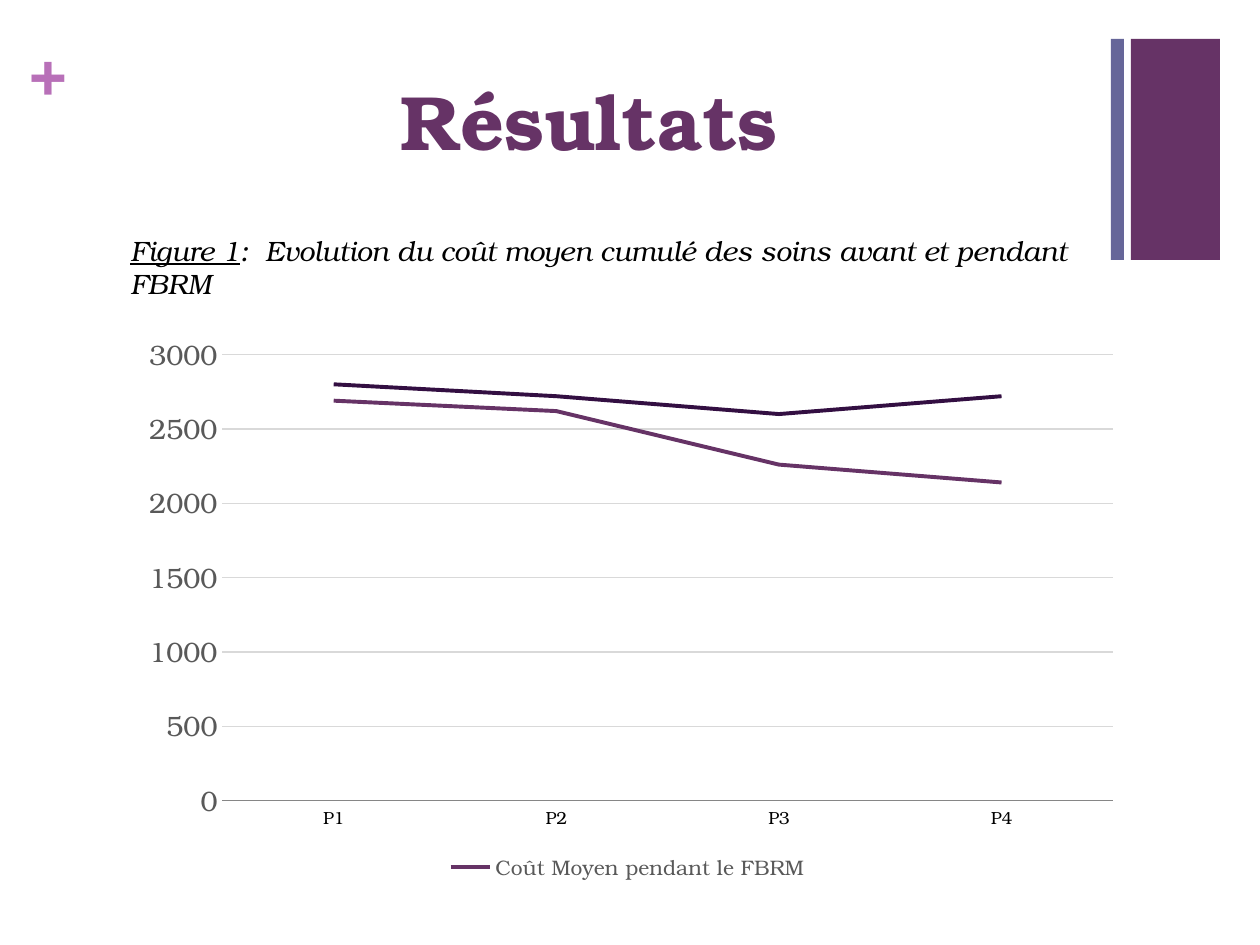
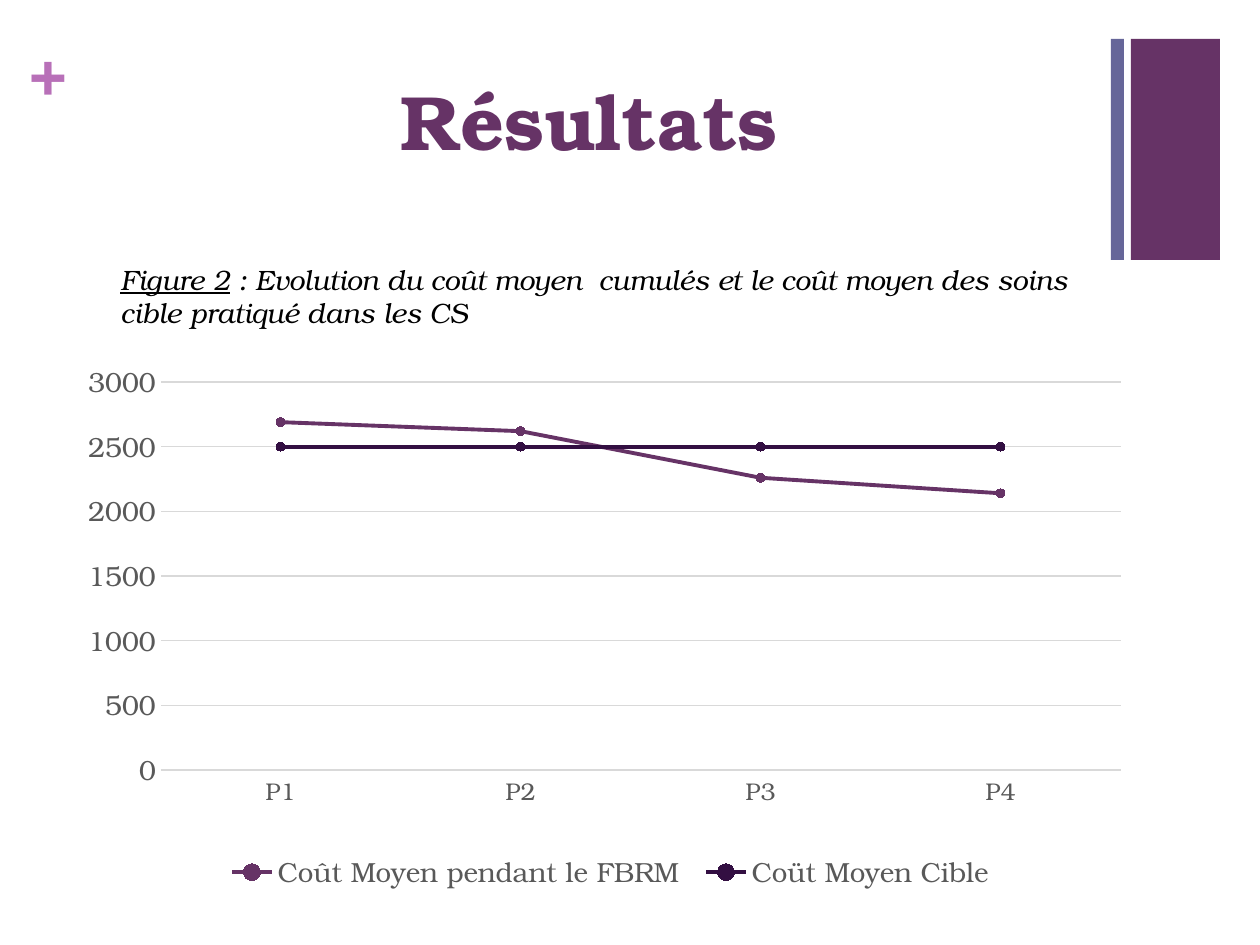
from lxml import etree
from pptx import Presentation
from pptx import util as u
from pptx.chart.data import CategoryChartData
from pptx.dml.color import RGBColor
from pptx.enum import chart as charts, shapes, text

PX_PER_INCH = 126
FONT = "TeX Gyre Bonum"
PURPLE, BLUE, PINK, DARK = "663366", "666699", "B870B8", "330F42"
BLACK, GREY, GRID, AXIS = "000000", "595959", "D9D9D9", "868686"
PERIODS = ["P1", "P2", "P3", "P4"]
COST_DURING = ("Coût Moyen pendant le FBRM ", [2690, 2620, 2260, 2140])
COST_BEFORE = ("Coût moyen avant FBR", [2800, 2720, 2600, 2720])
COST_TARGET = ("Coüt Moyen Cible ", [2500, 2500, 2500, 2500])


def px(length):
    return u.Emu(round(length * 914400 / PX_PER_INCH))


def box(*lengths):
    return [px(length) for length in lengths]


def color(hex_string):
    return RGBColor.from_string(hex_string)


def style_font(font, size, hex_string, bold=False, italic=False, underline=False):
    font.name, font.size = FONT, u.Pt(size)
    font.bold, font.italic, font.underline = bold, italic, underline
    font.color.rgb = color(hex_string)


def style_line(line, hex_string, width):
    line.color.rgb = color(hex_string)
    line.width = u.Pt(width)


def add_run(paragraph, words, size, hex_string, **style):
    run = paragraph.add_run()
    run.text = words
    style_font(run.font, size, hex_string, **style)


def add_band(slide, bounds, hex_string):
    band = slide.shapes.add_shape(shapes.MSO_SHAPE.RECTANGLE, *box(*bounds))
    band.shadow.inherit = False
    band.fill.solid()
    band.fill.fore_color.rgb = color(hex_string)
    band.line.fill.background()


def add_text_box(slide, bounds):
    frame = slide.shapes.add_textbox(*box(*bounds)).text_frame
    frame.word_wrap = True
    frame.auto_size = text.MSO_AUTO_SIZE.SHAPE_TO_FIT_TEXT
    return frame


def add_decoration(slide):
    add_band(slide, (1131, 39, 89, 221), PURPLE)
    add_band(slide, (1111, 39, 13, 221), BLUE)
    frame = add_text_box(slide, (30, 32, 37, 77))
    frame.margin_left = frame.margin_right = 0
    frame.margin_top = frame.margin_bottom = 0
    add_run(frame.paragraphs[0], "+", 36, PINK, bold=True)


def set_title(slide, words):
    title = slide.shapes.title
    title.left, title.top, title.width, title.height = box(69, 67, 1041, 154)
    frame = title.text_frame
    frame.vertical_anchor = text.MSO_ANCHOR.TOP
    frame.auto_size = text.MSO_AUTO_SIZE.NONE
    paragraph = frame.paragraphs[0]
    paragraph.alignment = text.PP_ALIGN.CENTER
    add_run(paragraph, words, 44, PURPLE, bold=True)


def add_caption(slide, bounds, label, words):
    paragraph = add_text_box(slide, bounds).paragraphs[0]
    add_run(paragraph, label, 16, BLACK, italic=True, underline=True)
    add_run(paragraph, words, 16, BLACK, italic=True)


def add_chart_part(parent, tag, value=None):
    namespace = parent.nsmap["c"]
    part = etree.SubElement(parent, f"{{{namespace}}}{tag}")
    if value is not None:
        part.set("val", str(value))
    return part


def hide_legend_entry(chart, index):
    legend = chart.legend._element
    entry = add_chart_part(legend, "legendEntry")
    add_chart_part(entry, "idx", index)
    add_chart_part(entry, "delete", 1)
    legend.insert(1, entry)


def set_plot_area(chart, x, y, width, height):
    plot_area = chart._chartSpace.chart.plotArea
    for old_layout in plot_area.findall("c:layout", plot_area.nsmap):
        plot_area.remove(old_layout)
    layout = add_chart_part(plot_area, "layout")
    plot_area.insert(0, layout)
    manual = add_chart_part(layout, "manualLayout")
    for tag, value in (("layoutTarget", "inner"), ("xMode", "edge"), ("yMode", "edge"),
                       ("x", x), ("y", y), ("w", width), ("h", height)):
        add_chart_part(manual, tag, value)


def add_line_chart(slide, bounds, series_list, category_font, legend_size,
                   axis_color, markers=False):
    data = CategoryChartData()
    data.categories = PERIODS
    for name, values in series_list:
        data.add_series(name, values)
    kind = charts.XL_CHART_TYPE.LINE_MARKERS if markers else charts.XL_CHART_TYPE.LINE
    chart = slide.shapes.add_chart(kind, *box(*bounds), data).chart
    chart.has_title = False
    style_font(chart.font, 10, BLACK)

    # Series
    plot = chart.plots[0]
    plot.vary_by_categories = False
    for series, hex_string in zip(plot.series, (PURPLE, DARK)):
        series.smooth = False
        style_line(series.format.line, hex_string, 2.25)
        if markers:
            series.marker.style = charts.XL_MARKER_STYLE.CIRCLE
            series.marker.size = 5
            series.marker.format.fill.solid()
            series.marker.format.fill.fore_color.rgb = color(hex_string)
            style_line(series.marker.format.line, hex_string, 0.75)

    # Axes
    for axis in (chart.category_axis, chart.value_axis):
        axis.major_tick_mark = axis.minor_tick_mark = charts.XL_TICK_MARK.NONE
    style_font(chart.category_axis.tick_labels.font, *category_font)
    style_line(chart.category_axis.format.line, axis_color, 0.75)
    value_axis = chart.value_axis
    value_axis.minimum_scale, value_axis.maximum_scale = 0, 3000
    value_axis.major_unit = 500
    style_font(value_axis.tick_labels.font, 16, GREY)
    value_axis.format.line.fill.background()
    style_line(value_axis.major_gridlines.format.line, GRID, 0.75)

    # Legend
    chart.has_legend = True
    chart.legend.position = charts.XL_LEGEND_POSITION.BOTTOM
    chart.legend.include_in_layout = False
    style_font(chart.legend.font, legend_size, GREY)
    return chart


def add_results_slide(presentation):
    slide = presentation.slides.add_slide(presentation.slide_layouts[5])
    add_decoration(slide)
    set_title(slide, "Résultats")
    return slide


def main():
    presentation = Presentation()
    presentation.slide_width, presentation.slide_height = box(1260, 945)

    # Cost before and during the programme
    slide = add_results_slide(presentation)
    chart = add_line_chart(slide, (129, 325, 1004, 561), [COST_DURING, COST_BEFORE],
                           (10, BLACK), 12, AXIS)
    hide_legend_entry(chart, 1)
    add_caption(slide, (118, 227, 994, 84), "Figure 1",
                ":  Evolution du coût moyen cumulé des soins avant et pendant FBRM")

    # Cost against the target
    slide = add_results_slide(presentation)
    chart = add_line_chart(slide, (88, 364, 1043, 532), [COST_DURING, COST_TARGET],
                           (14, GREY), 16, GRID, markers=True)
    set_plot_area(chart, 0.06, 0.02, 0.93, 0.74)
    add_caption(slide, (108, 256, 1014, 118), "Figure 2",
                " : Evolution du coût moyen  cumulés et le coût moyen des soins "
                "cible pratiqué dans les CS")

    presentation.save("out.pptx")


if __name__ == "__main__":
    main()
